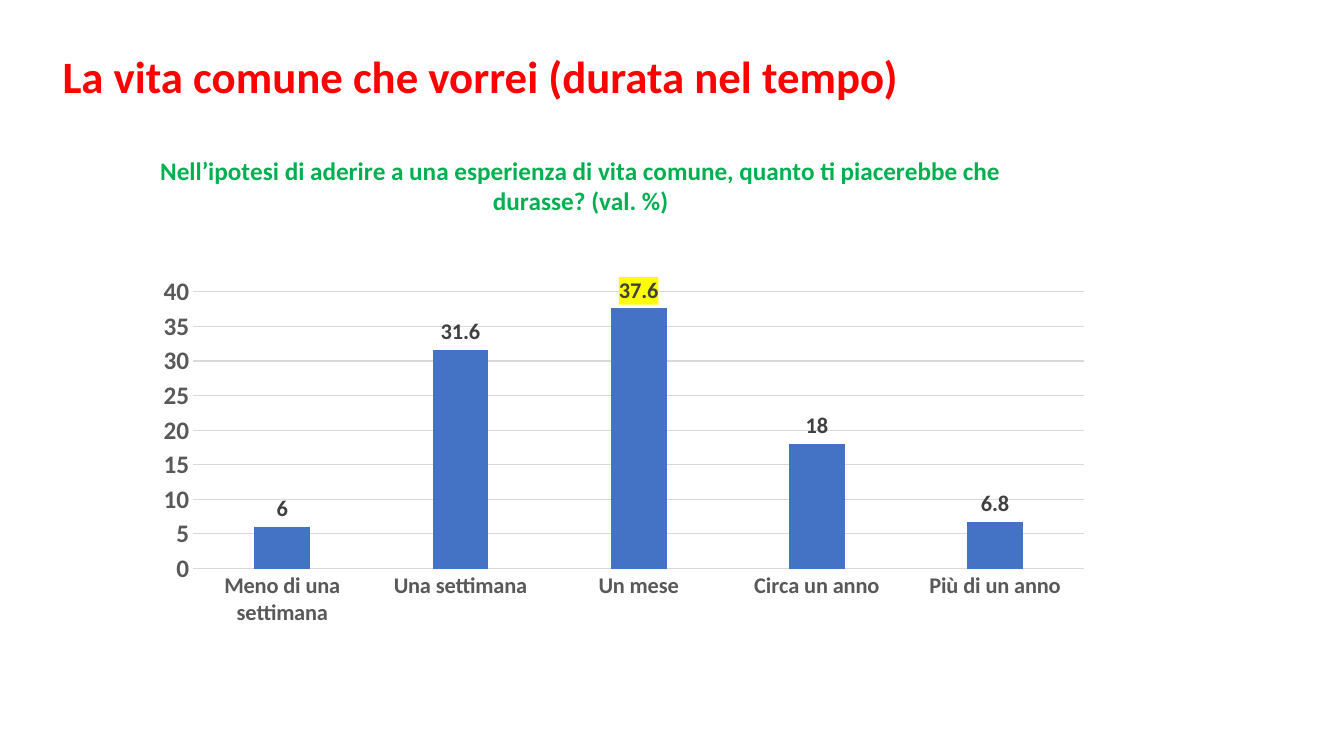
import pptx
import pptx.chart.data
import pptx.dml.color
import pptx.enum.chart
import pptx.enum.text
import pptx.oxml
import pptx.oxml.ns
import pptx.util

TITLE = "La vita comune che vorrei (durata nel tempo)"
QUESTION = ("Nell’ipotesi di aderire a una esperienza di vita comune, "
            "quanto ti piacerebbe che durasse? (val. %)")
DURATIONS = {
    "Meno di una settimana": 6,
    "Una settimana": 31.6,
    "Un mese": 37.6,
    "Circa un anno": 18,
    "Più di un anno": 6.8,
}
WIDTH, HEIGHT = 13.33, 7.5
TITLE_BOX = (0.52, 0.43, 11.26, 0.64)
CHART_BOX = (0.23, 1.24, 10.95, 5.83)
PLOT_SHARES = {"x": 0.154, "y": 0.284, "w": 0.807, "h": 0.471}
QUESTION_SHARES = {"x": 0.12, "y": 0.04}
GREY, GRID = "595959", "D9D9D9"


def color(value):
    return pptx.dml.color.RGBColor.from_string(value)


def inches(box):
    return [pptx.util.Inches(length) for length in box]


def format_font(font, size, font_color):
    font.name = "Calibri"
    font.size = pptx.util.Pt(size)
    font.bold = True
    font.color.rgb = color(font_color)


def write(frame, text, size, font_color, align):
    paragraph = frame.paragraphs[0]
    paragraph.alignment = align
    run = paragraph.add_run()
    run.text = text
    format_font(run.font, size, font_color)


def format_line(line, line_color):
    line.color.rgb = color(line_color)
    line.width = pptx.util.Pt(0.75)


def place(element, index, shares, inner=False):
    """Give a chart part a fixed place, in shares of the chart's size."""
    for layout in element.findall(pptx.oxml.ns.qn("c:layout")):
        element.remove(layout)
    target = '<c:layoutTarget val="inner"/>' if inner else ""
    modes = "".join(f'<c:{key}Mode val="edge"/>' for key in "xy")
    values = "".join(f'<c:{key} val="{share}"/>' for key, share in shares.items())
    element.insert(index, pptx.oxml.parse_xml(
        f'<c:layout {pptx.oxml.ns.nsdecls("c")}><c:manualLayout>'
        f"{target}{modes}{values}</c:manualLayout></c:layout>"))


def highlight_label(series, index, fill):
    label = series.points[index].data_label
    format_font(label.font, 16, "404040")
    label.position = pptx.enum.chart.XL_LABEL_POSITION.OUTSIDE_END
    text_properties = series._element.xpath("c:dLbls/c:dLbl/c:txPr")[0]
    text_properties.addprevious(pptx.oxml.parse_xml(
        f'<c:spPr {pptx.oxml.ns.nsdecls("c", "a")}><a:solidFill>'
        f'<a:srgbClr val="{fill}"/></a:solidFill></c:spPr>'))


def add_title(slide):
    title = slide.shapes.title
    title.left, title.top, title.width, title.height = inches(TITLE_BOX)
    frame = title.text_frame
    frame.word_wrap = True
    frame.auto_size = pptx.enum.text.MSO_AUTO_SIZE.SHAPE_TO_FIT_TEXT
    frame.vertical_anchor = pptx.enum.text.MSO_ANCHOR.TOP
    write(frame, TITLE, 32, "FF0000", pptx.enum.text.PP_ALIGN.LEFT)


def add_duration_chart(slide):
    data = pptx.chart.data.CategoryChartData()
    data.categories = list(DURATIONS)
    data.add_series("Series 1", list(DURATIONS.values()))
    chart = slide.shapes.add_chart(
        pptx.enum.chart.XL_CHART_TYPE.COLUMN_CLUSTERED, *inches(CHART_BOX), data).chart
    format_font(chart.font, 10, "000000")
    chart.has_legend = False
    write(chart.chart_title.text_frame, QUESTION, 18, "00B050",
          pptx.enum.text.PP_ALIGN.CENTER)
    chart.chart_title.include_in_layout = False
    place(chart.chart_title._element, 1, QUESTION_SHARES)
    place(chart._chartSpace.chart.plotArea, 0, PLOT_SHARES, inner=True)

    for axis, size in ((chart.category_axis, 16), (chart.value_axis, 18)):
        axis.major_tick_mark = pptx.enum.chart.XL_TICK_MARK.NONE
        format_font(axis.tick_labels.font, size, GREY)
    format_line(chart.category_axis.format.line, GRID)
    chart.value_axis.format.line.fill.background()
    format_line(chart.value_axis.major_gridlines.format.line, GRID)
    chart.value_axis.minimum_scale = 0
    chart.value_axis.maximum_scale = 40
    chart.value_axis.major_unit = 5

    plot = chart.plots[0]
    plot.gap_width = 219
    plot.overlap = -27
    plot.vary_by_categories = False
    series = plot.series[0]
    series.format.fill.solid()
    series.format.fill.fore_color.rgb = color("4472C4")
    labels = series.data_labels
    labels.show_value = True
    labels.position = pptx.enum.chart.XL_LABEL_POSITION.OUTSIDE_END
    format_font(labels.font, 16, "404040")
    highlight_label(series, list(DURATIONS).index("Un mese"), "FFFF00")


def main():
    presentation = pptx.Presentation()
    presentation.slide_width, presentation.slide_height = inches((WIDTH, HEIGHT))
    slide = presentation.slides.add_slide(presentation.slide_layouts[5])
    add_title(slide)
    add_duration_chart(slide)
    presentation.save("out.pptx")


if __name__ == "__main__":
    main()
